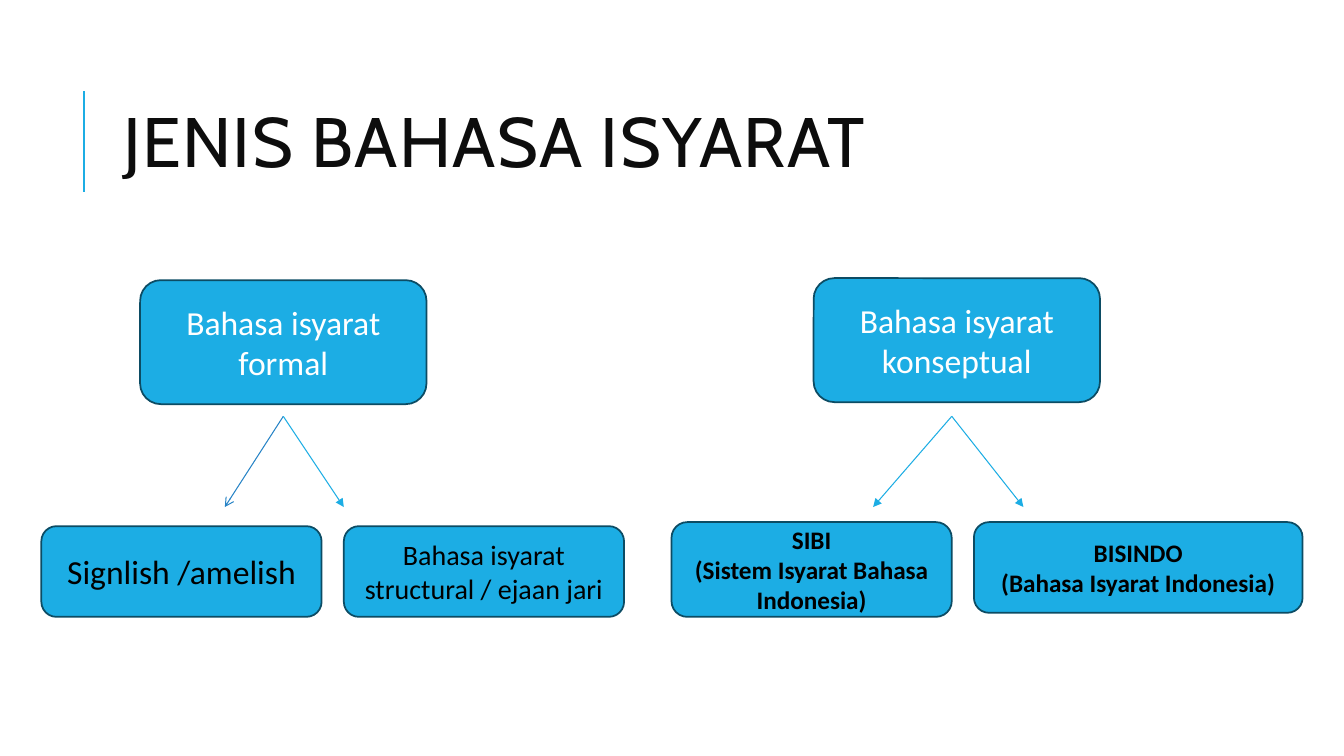
from pptx import Presentation
from pptx import util as u
from pptx.dml.color import RGBColor
from pptx.enum import shapes, text
from lxml import etree

PX = 9144  # one px is a hundredth of an inch
DRAWING = "{http://schemas.openxmlformats.org/drawingml/2006/main}"


def color(hex_string):
    return RGBColor.from_string(hex_string)


def write(frame, words, font="Calibri", size=24, ink="000000", bold=False,
          align=text.PP_ALIGN.CENTER, line_spacing=1.0):
    frame.word_wrap = True
    frame.auto_size = text.MSO_AUTO_SIZE.NONE
    frame.vertical_anchor = text.MSO_ANCHOR.MIDDLE
    frame.text = words
    for paragraph in frame.paragraphs:
        paragraph.alignment = align
        paragraph.line_spacing = line_spacing
        for run in paragraph.runs:
            run.font.name = font
            run.font.size = u.Pt(size)
            run.font.bold = bold
            run.font.color.rgb = color(ink)


presentation = Presentation()
presentation.slide_width = 1333 * PX
presentation.slide_height = 750 * PX
slide = presentation.slides.add_slide(presentation.slide_layouts[5])

# Title
title = slide.shapes.title
title.left, title.top, title.width, title.height = (
    n * PX for n in (112, 64, 1063, 164))
write(title.text_frame, "JENIS BAHASA ISYARAT", font="Cabin", size=50,
      ink="0D0D0D", align=text.PP_ALIGN.LEFT, line_spacing=0.8)
title.text_frame.paragraphs[0].runs[0].font._element.set("spc", "100")

# Sign language types and their kinds: place, words, text format
boxes = [
    ((139, 278, 284, 123), "Bahasa isyarat formal", {"ink": "FFFFFF"}),
    ((807, 276, 284, 123), "Bahasa isyarat konseptual", {"ink": "FFFFFF"}),
    ((41, 522, 278, 90), "Signlish /amelish", {}),
    ((341, 522, 278, 90), "Bahasa isyarat structural / ejaan jari",
     {"size": 20}),
    ((666, 518, 278, 94), "SIBI\n(Sistem Isyarat Bahasa Indonesia)",
     {"size": 18, "bold": True}),
    ((966, 518, 326, 90), "BISINDO\n(Bahasa Isyarat Indonesia)",
     {"size": 18, "bold": True}),
]
for place, words, text_format in boxes:
    box = slide.shapes.add_shape(shapes.MSO_SHAPE.ROUNDED_RECTANGLE,
                                 *(n * PX for n in place))
    box.shadow.inherit = False
    box.fill.solid()
    box.fill.fore_color.rgb = color("1CADE4")
    box.line.color.rgb = color("0C4C64")
    box.line.width = u.Pt(1.25)
    write(box.text_frame, words, **text_format)

# Title rule and branch arrows: ends, colour, width, arrowhead
lines = [
    ((83, 190, 83, 90), "1CADE4", 1.5, None),
    ((281, 413, 223, 503), "2683C6", 0.75, "arrow"),
    ((281, 413, 341, 503), "1CADE4", 0.75, "triangle"),
    ((944, 413, 866, 503), "1CADE4", 0.75, "triangle"),
    ((944, 413, 1015, 503), "1CADE4", 0.75, "triangle"),
]
for ends, ink, width, head in lines:
    branch = slide.shapes.add_connector(shapes.MSO_CONNECTOR.STRAIGHT,
                                        *(n * PX for n in ends))
    branch.line.color.rgb = color(ink)
    branch.line.width = u.Pt(width)
    if head:
        etree.SubElement(branch.line._get_or_add_ln(), DRAWING + "tailEnd",
                         type=head)
    etree.SubElement(branch._element.spPr, DRAWING + "effectLst")

presentation.save("out.pptx")
